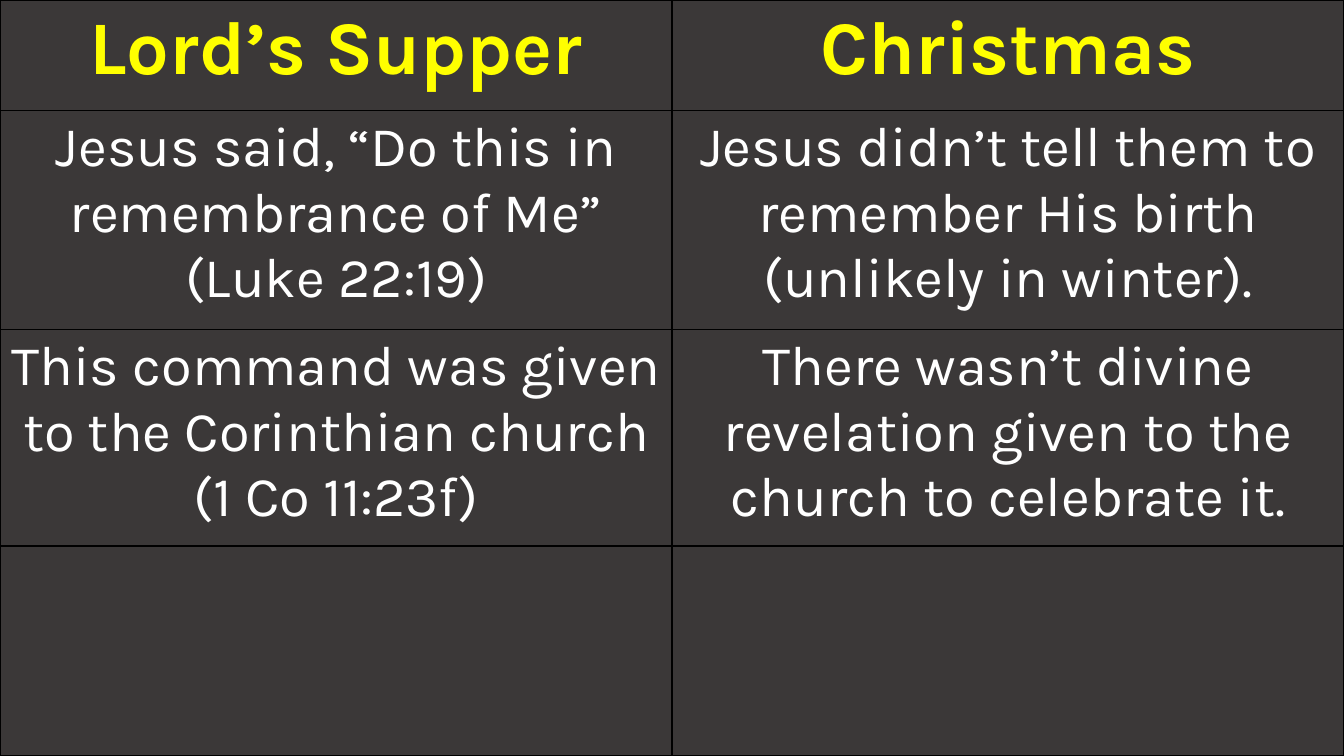
import lxml.etree
import pptx
import pptx.dml.color
import pptx.enum.text
import pptx.oxml
import pptx.oxml.ns
import pptx.util

Cm, Pt = pptx.util.Cm, pptx.util.Pt
RGBColor = pptx.dml.color.RGBColor

ROWS = [
    ("Lord’s Supper", "Christmas"),
    ("Jesus said, “Do this in remembrance of Me” (Luke 22:19)",
     "Jesus didn’t tell them to remember His birth (unlikely in winter)."),
    ("This command was given to the Corinthian church (1 Co 11:23f)",
     "There wasn’t divine revelation given to the church to celebrate it."),
    ("", ""),
]
ROW_HEIGHTS = [2.79, 5.51, 5.46, 5.29]
WIDTH, HEIGHT = Cm(33.87), Cm(19.05)

FONT = "Karla"
BLACK = RGBColor(0x00, 0x00, 0x00)
CHARCOAL = RGBColor(0x3B, 0x38, 0x38)
YELLOW = RGBColor(0xFF, 0xFF, 0x00)
WHITE = RGBColor(0xFF, 0xFF, 0xFF)


def add_borders(cell, color, width):
    tcPr = cell._tc.get_or_add_tcPr()
    for i, side in enumerate(("lnL", "lnR", "lnT", "lnB")):
        ln = pptx.oxml.parse_xml(
            f'<a:{side} {pptx.oxml.ns.nsdecls("a")} w="{width}">'
            f'<a:solidFill><a:srgbClr val="{color}"/></a:solidFill></a:{side}>')
        tcPr.insert(i, ln)


def fill_cell(cell, text, header):
    cell.fill.solid()
    cell.fill.fore_color.rgb = CHARCOAL
    add_borders(cell, BLACK, Pt(1))
    if not text:
        return
    p = cell.text_frame.paragraphs[0]
    p.text = text
    p.alignment = pptx.enum.text.PP_ALIGN.CENTER
    p.font.name = FONT
    p.font.size = Pt(54 if header else 40)
    p.font.bold = header
    p.font.color.rgb = YELLOW if header else WHITE


def main():
    prs = pptx.Presentation()
    prs.slide_width, prs.slide_height = WIDTH, HEIGHT
    slide = prs.slides.add_slide(prs.slide_layouts[6])
    slide.background.fill.solid()
    slide.background.fill.fore_color.rgb = BLACK

    table = slide.shapes.add_table(len(ROWS), 2, 0, 0, WIDTH, HEIGHT).table
    for r, (texts, height) in enumerate(zip(ROWS, ROW_HEIGHTS)):
        table.rows[r].height = Cm(height)
        for c, text in enumerate(texts):
            fill_cell(table.cell(r, c), text, r == 0)

    prs.save("out.pptx")


if __name__ == "__main__":
    main()
